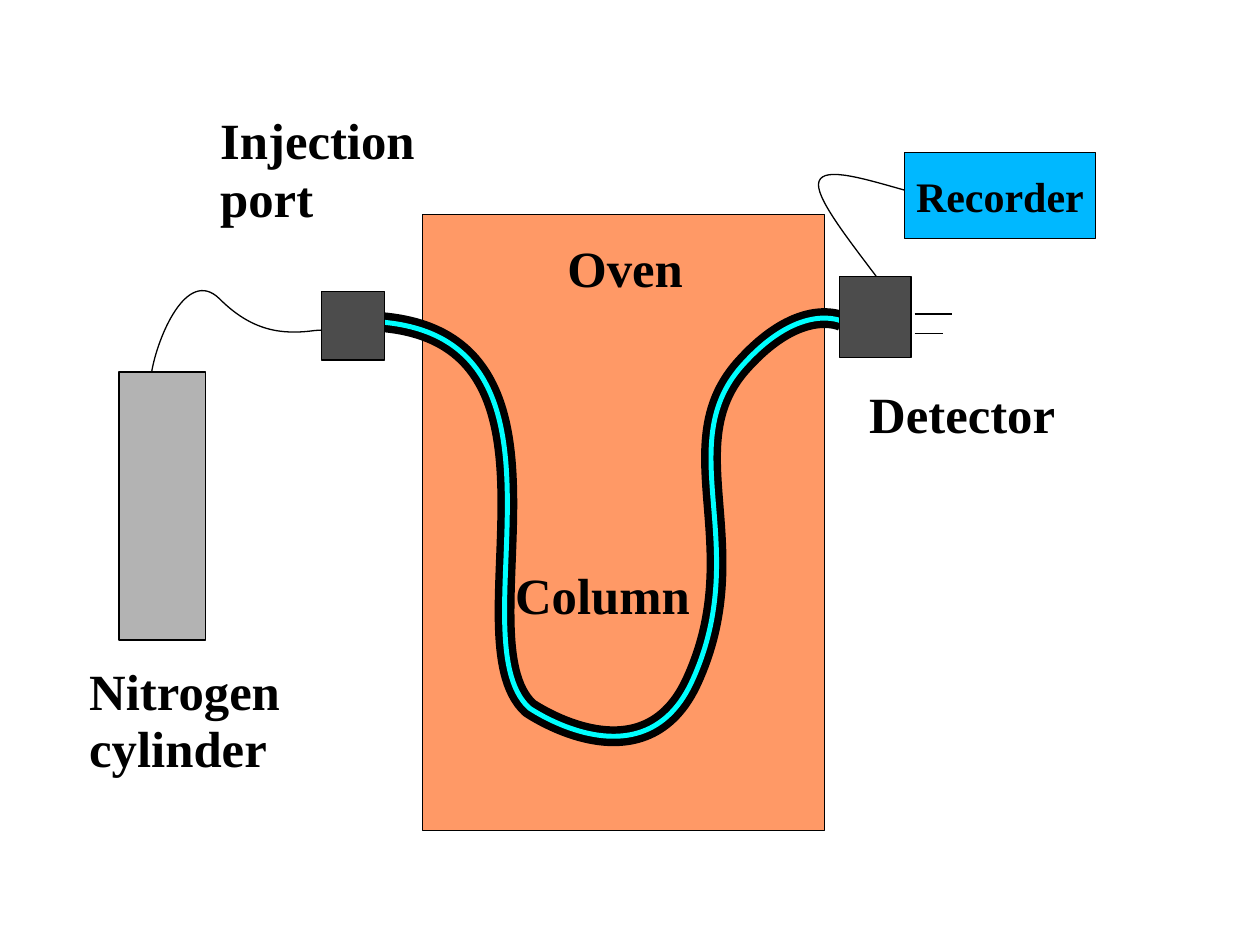
"""Build a slide with a diagram of a gas chromatograph."""
from pptx import Presentation
from pptx.dml.color import RGBColor
from pptx.enum.shapes import MSO_CONNECTOR, MSO_SHAPE
from pptx.enum.text import MSO_ANCHOR, MSO_AUTO_SIZE, PP_ALIGN
from pptx.oxml.ns import qn
from pptx.util import Pt
from lxml import etree

RECTANGLE, ROUNDED = MSO_SHAPE.RECTANGLE, MSO_SHAPE.ROUNDED_RECTANGLE
STRAIGHT = MSO_CONNECTOR.STRAIGHT
LEFT, CENTER = PP_ALIGN.LEFT, PP_ALIGN.CENTER
TOP, MIDDLE = MSO_ANCHOR.TOP, MSO_ANCHOR.MIDDLE
GROW, FIXED = MSO_AUTO_SIZE.SHAPE_TO_FIT_TEXT, MSO_AUTO_SIZE.NONE
BLACK = "000000"


def color(hex_string):
    return RGBColor.from_string(hex_string)


def write(shape, text, size=29, align=LEFT, anchor=TOP, wrap=True, fit=GROW,
          spacing=0.95, margins=(0, 0)):
    frame = shape.text_frame
    frame.word_wrap = wrap
    frame.auto_size = fit
    frame.vertical_anchor = anchor
    frame.margin_left = frame.margin_right = Pt(margins[0])
    frame.margin_top = frame.margin_bottom = Pt(margins[1])
    frame.text = text
    for paragraph in frame.paragraphs:
        paragraph.alignment = align
        paragraph.line_spacing = spacing
        font = paragraph.runs[0].font
        font.name = "Times New Roman"
        font.size = Pt(size)
        font.bold = True
        font.color.rgb = color(BLACK)


presentation = Presentation()
presentation.slide_width, presentation.slide_height = Pt(720), Pt(540)
slide = presentation.slides.add_slide(presentation.slide_layouts[6])
shapes = slide.shapes

column = [(205.9, 183.6),
          (344.9, 183.6), (258.5, 363.9), (302.4, 404.6),
          (302.4, 404.6), (368.6, 450.3), (396, 388.1),
          (430.6, 311), (382.3, 253.4), (425.5, 207.4),
          (457.9, 172.1), (481, 183.6), (481, 183.6)]
gas_pipe = [(86.7, 212.4),
            (90, 193), (106.6, 152.6), (125.3, 170.6),
            (144, 189.4), (161.3, 191.5), (180, 188.9),
            (183.6, 188.7)]
signal_wire = [(500.7, 157.9),
               (483.1, 134.6), (465.1, 111.6), (468, 103.7),
               (470.9, 95), (493.9, 102.2), (517, 108.7)]

boxes = {
    "oven": (ROUNDED, 241.4, 122.4, 229.7, 352.1, "FF9966"),
    "injection port": (ROUNDED, 183.6, 166.7, 36, 39, "4C4C4C"),
    "detector": (ROUNDED, 479.6, 158.1, 40.9, 46, "4C4C4C"),
    "nitrogen cylinder": (ROUNDED, 68, 212.5, 49.4, 153.2, "B3B3B3"),
    "recorder": (RECTANGLE, 517, 87.1, 108.9, 49, "00B8FF"),
}
curves = {
    "column wall": (column, 11.34, BLACK),
    "column bore": (column, 2.83, "00FFFF"),
    "gas pipe": (gas_pipe, 0.75, BLACK),
    "signal wire": (signal_wire, 0.75, BLACK),
}
labels = {
    "Oven": (275.6, 137.9, 163.4, 33.1, CENTER),
    "Detector": (496.7, 221.3, 131, 33.1, LEFT),
    "Injection\nport": (125.8, 64.8, 131, 67, LEFT),
    "Nitrogen\ncylinder": (51, 379.3, 131, 67, LEFT),
    "Column": (294.3, 324.8, 113.8, 33.1, LEFT),
}
stacking = ["oven", "column wall", "column bore", "injection port", "detector",
            "nitrogen cylinder", "gas pipe", *labels, "recorder", "signal wire"]

for part in stacking:
    if part in labels:
        left, top, width, height, align = labels[part]
        label = shapes.add_textbox(Pt(left), Pt(top), Pt(width), Pt(height))
        write(label, part, align=align)
        continue
    if part in boxes:
        preset, left, top, width, height, fill = boxes[part]
        line_width, line_color = 0.75, BLACK
        shape = shapes.add_shape(preset, Pt(left), Pt(top), Pt(width), Pt(height))
        shape.fill.solid()
        shape.fill.fore_color.rgb = color(fill)
        if preset == ROUNDED:
            shape.adjustments[0] = 0
        else:
            write(shape, "Recorder", size=24, align=CENTER, anchor=MIDDLE, wrap=False,
                  fit=FIXED, spacing=1.0, margins=(6.5, 3.6))
    else:
        points, line_width, line_color = curves[part]
        start, *vertices = [(Pt(x), Pt(y)) for x, y in points]
        builder = shapes.build_freeform(*start)
        builder.add_line_segments(vertices, close=False)
        shape = builder.convert_to_shape()
        shape.fill.background()
        segments = list(shape.element.iter(qn("a:lnTo")))
        for first, second, third in zip(segments[::3], segments[1::3], segments[2::3]):
            first.tag = qn("a:cubicBezTo")
            for segment in (second, third):
                first.append(segment[0])
                segment.getparent().remove(segment)
    shape.shadow.inherit = False
    shape.line.width = Pt(line_width)
    shape.line.color.rgb = color(line_color)

for end, height in [(544.3, 179.4), (538.6, 190.6)]:
    prong = shapes.add_connector(STRAIGHT, Pt(522.7), Pt(height), Pt(end), Pt(height))
    prong.line.width = Pt(0.75)
    prong.line.color.rgb = color(BLACK)
    etree.SubElement(prong.element.spPr, qn("a:effectLst"))

presentation.save("out.pptx")
